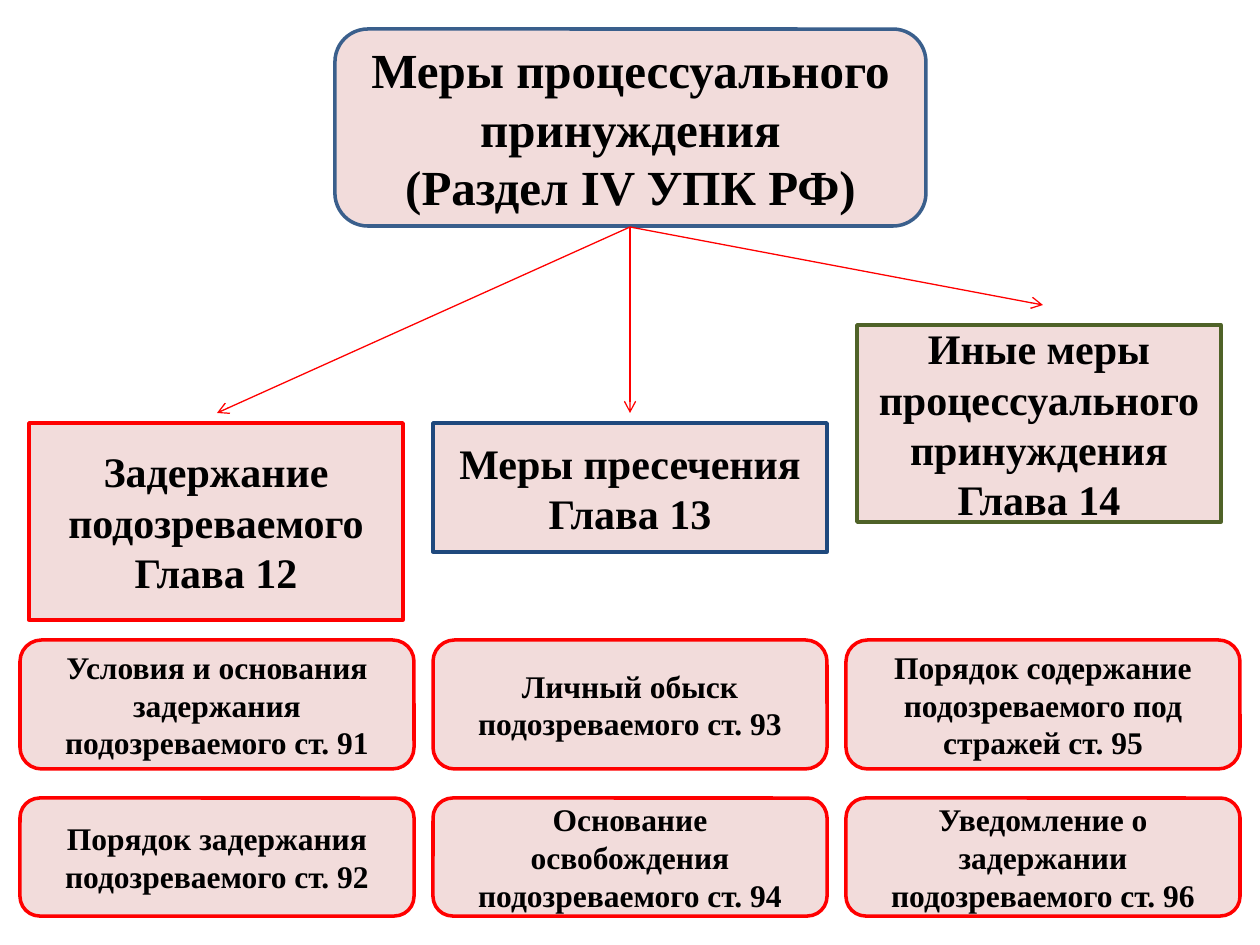
from dataclasses import dataclass

from lxml import etree
from pptx import Presentation, util as u
from pptx.dml.color import RGBColor
from pptx.enum import shapes, text
from pptx.oxml.ns import qn

PX_PER_INCH = 126


@dataclass(frozen=True)
class Theme:
    font: str = "Times New Roman"
    ink: str = "000000"
    fill: str = "F2DCDB"
    red: str = "FF0000"
    steel: str = "3A5F8C"
    navy: str = "1F497D"
    olive: str = "4F6228"
    title: int = 28
    chapter: int = 24
    article: int = 18
    border: float = 2
    arrow: float = 0.75


T = Theme()
RECT = shapes.MSO_SHAPE.RECTANGLE
ROUND = shapes.MSO_SHAPE.ROUNDED_RECTANGLE

# Columns and rows of the article grid: left edges, then (top, height)
COL_LEFT, COL_STEP, COL_W = 20, 413, 394
ROWS = [(640, 129), (798, 118)]

CHAPTERS = [
    ((29, 423, 374, 197), T.red, ["Задержание подозреваемого", "Глава 12"]),
    ((433, 423, 394, 129), T.navy, ["Меры пресечения", "Глава 13"]),
    ((857, 325, 364, 197), T.olive,
     ["Иные меры процессуального принуждения", "Глава 14"]),
]
ARTICLES = [
    ["Условия и основания задержания подозреваемого ст. 91",
     "Личный обыск подозреваемого ст. 93",
     "Порядок содержание подозреваемого под стражей ст. 95"],
    ["Порядок задержания подозреваемого ст. 92",
     "Основание освобождения подозреваемого ст. 94",
     "Уведомление о задержании подозреваемого ст. 96"],
]
ARROW_START = (630, 227)
ARROW_ENDS = [(1043, 305), (630, 413), (217, 413)]


def px(n):
    return u.Emu(round(n * u.Inches(1) / PX_PER_INCH))


def apply(obj, values):
    for name, value in values.items():
        setattr(obj, name, value)


def set_line(line, color, width):
    line.color.rgb = RGBColor.from_string(color)
    line.width = u.Pt(width)


def add_box(s, kind, box, border, lines, size):
    sp = s.shapes.add_shape(kind, *map(px, box))
    sp.shadow.inherit = False
    sp.fill.solid()
    sp.fill.fore_color.rgb = RGBColor.from_string(T.fill)
    set_line(sp.line, border, T.border)
    tf = sp.text_frame
    apply(tf, {"word_wrap": True, "vertical_anchor": text.MSO_ANCHOR.MIDDLE})
    for i, line in enumerate(lines):
        p = tf.paragraphs[0] if i == 0 else tf.add_paragraph()
        p.alignment = text.PP_ALIGN.CENTER
        r = p.add_run()
        r.text = line
        apply(r.font, {"name": T.font, "size": u.Pt(size), "bold": True})
        r.font.color.rgb = RGBColor.from_string(T.ink)


def add_arrow(s, start, end):
    cx = s.shapes.add_connector(shapes.MSO_CONNECTOR.STRAIGHT,
                                *map(px, start + end))
    set_line(cx.line, T.red, T.arrow)
    sp_pr = cx._element.spPr
    etree.SubElement(sp_pr.find(qn("a:ln")), qn("a:tailEnd"), type="arrow")
    etree.SubElement(sp_pr, qn("a:effectLst"))


def main():
    prs = Presentation()
    prs.slide_width, prs.slide_height = px(1260), px(945)
    s = prs.slides.add_slide(prs.slide_layouts[6])

    # Heading
    add_box(s, ROUND, (335, 29, 591, 197), T.steel,
            ["Меры процессуального принуждения", "(Раздел IV УПК РФ)"], T.title)

    # Chapters and the arrows to them
    for box, border, lines in CHAPTERS:
        add_box(s, RECT, box, border, lines, T.chapter)
    for end in ARROW_ENDS:
        add_arrow(s, ARROW_START, end)

    # Articles
    for (top, height), row in zip(ROWS, ARTICLES):
        for col, label in enumerate(row):
            box = (COL_LEFT + col * COL_STEP, top, COL_W, height)
            add_box(s, ROUND, box, T.red, [label], T.article)

    prs.save("out.pptx")


if __name__ == "__main__":
    main()
